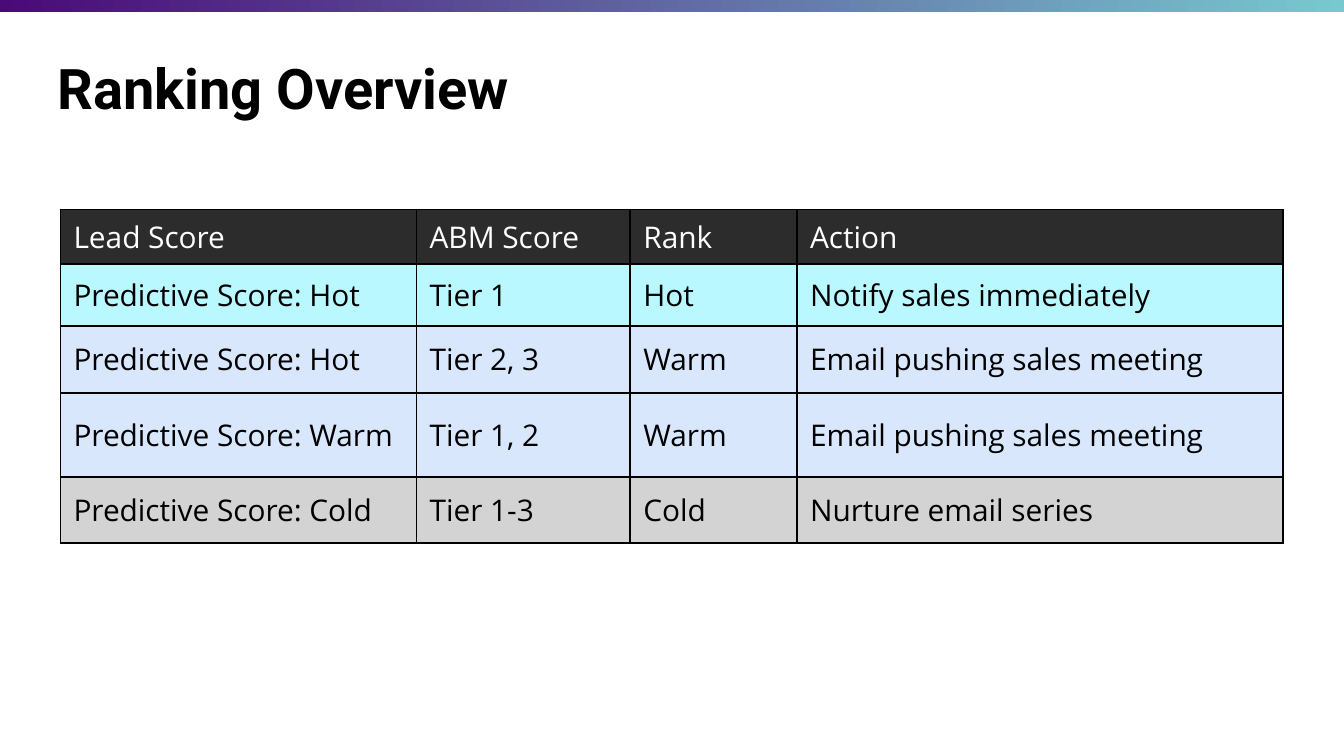
from pptx import Presentation
from pptx.dml.color import RGBColor
from pptx.enum.shapes import MSO_SHAPE as Shape
from pptx.enum.text import MSO_ANCHOR as Anchor, MSO_AUTO_SIZE as AutoSize, PP_ALIGN as Align
from pptx.oxml import parse_xml
from pptx.oxml.ns import nsdecls
from pptx.util import Cm, Pt

BLACK = RGBColor(0x00, 0x00, 0x00)
WHITE = RGBColor(0xFF, 0xFF, 0xFF)
CHARCOAL = RGBColor(0x2C, 0x2C, 0x2C)
HOT_CYAN = RGBColor(0xBA, 0xF8, 0xFF)
WARM_BLUE = RGBColor(0xD9, 0xE7, 0xFD)
COLD_GRAY = RGBColor(0xD3, 0xD3, 0xD3)
PURPLE = RGBColor(0x4A, 0x0A, 0x77)
TEAL = RGBColor(0x78, 0xC8, 0xCF)

SLIDE_WIDTH, SLIDE_HEIGHT = Cm(25.4), Cm(14.29)
COLUMN_WIDTHS = [6.73, 4.04, 3.15, 9.19]
ROW_HEIGHTS = [1, 1.17, 1.27, 1.59, 1.25]
HEADINGS = ["Lead Score", "ABM Score", "Rank", "Action"]
RANKING = [
    ["Predictive Score: Hot", "Tier 1", "Hot", "Notify sales immediately"],
    ["Predictive Score: Hot", "Tier 2, 3", "Warm", "Email pushing sales meeting"],
    ["Predictive Score: Warm", "Tier 1, 2", "Warm", "Email pushing sales meeting"],
    ["Predictive Score: Cold", "Tier 1-3", "Cold", "Nurture email series"],
]
RANK_FILLS = {"Hot": HOT_CYAN, "Warm": WARM_BLUE, "Cold": COLD_GRAY}


def set_all(target, values):
    for name, value in values.items():
        setattr(target, name, value)


class RankingSlide:
    """Holds the text styles and the slide being drawn."""

    title_font = {"name": "Roboto", "size": Pt(30), "bold": True}
    cell_font = {"name": "Open Sans", "size": Pt(16), "bold": False}
    padding = {f"margin_{side}": Cm(0.25) for side in ("left", "right", "top", "bottom")}
    cell_padding = {"margin_left": Cm(0.25), "margin_right": Cm(0.25),
                    "margin_top": Cm(0.13), "margin_bottom": Cm(0.13)}

    def __init__(self, deck):
        self.slide = deck.slides.add_slide(deck.slide_layouts[5])

    def title(self, wording):
        heading = self.slide.shapes.title
        set_all(heading, {"left": Cm(0.84), "top": Cm(0.46),
                          "width": Cm(19.81), "height": Cm(2.39)})
        frame = heading.text_frame
        set_all(frame, {"text": wording, "word_wrap": True, "auto_size": AutoSize.NONE,
                        "vertical_anchor": Anchor.MIDDLE, **self.padding})
        frame.paragraphs[0].alignment = Align.LEFT
        self.font(frame, self.title_font, BLACK)

    def gradient_band(self, height, *colors):
        band = self.slide.shapes.add_shape(Shape.RECTANGLE, 0, 0, SLIDE_WIDTH, height)
        band.shadow.inherit = False
        band.line.fill.background()
        band.fill.gradient()
        band.fill.gradient_angle = 0
        for stop, color in zip(band.fill.gradient_stops, colors):
            stop.color.rgb = color

    def table(self, left, top):
        grid = self.slide.shapes.add_table(
            len(ROW_HEIGHTS), len(COLUMN_WIDTHS), left, top,
            Cm(sum(COLUMN_WIDTHS)), Cm(sum(ROW_HEIGHTS))).table
        for column, width in zip(grid.columns, COLUMN_WIDTHS):
            column.width = Cm(width)
        for row, height in zip(grid.rows, ROW_HEIGHTS):
            row.height = Cm(height)
        for row, wordings in zip(grid.rows, [HEADINGS] + RANKING):
            is_header = wordings is HEADINGS
            fill = CHARCOAL if is_header else RANK_FILLS[wordings[2]]
            ink = WHITE if is_header else BLACK
            anchor = Anchor.TOP if is_header else Anchor.MIDDLE
            for cell, wording in zip(row.cells, wordings):
                self.cell(cell, wording, fill, ink, anchor)

    def cell(self, cell, wording, fill, ink, anchor):
        set_all(cell, {"text": wording, "vertical_anchor": anchor, **self.cell_padding})
        self.font(cell.text_frame, self.cell_font, ink)
        self.borders(cell)
        cell.fill.solid()
        cell.fill.fore_color.rgb = fill

    def borders(self, cell):
        properties = cell._tc.get_or_add_tcPr()
        for side in "LRTB":
            properties.append(parse_xml(
                f'<a:ln{side} {nsdecls("a")} w="{Pt(1)}"><a:solidFill>'
                f'<a:srgbClr val="{BLACK}"/></a:solidFill></a:ln{side}>'))

    def font(self, frame, style, color):
        font = frame.paragraphs[0].runs[0].font
        set_all(font, style)
        font.color.rgb = color


def main():
    deck = Presentation()
    set_all(deck, {"slide_width": SLIDE_WIDTH, "slide_height": SLIDE_HEIGHT})
    ranking = RankingSlide(deck)
    ranking.gradient_band(Cm(0.23), PURPLE, TEAL)
    ranking.title("Ranking Overview")
    ranking.table(Cm(1.14), Cm(3.96))
    deck.save("out.pptx")


if __name__ == "__main__":
    main()
